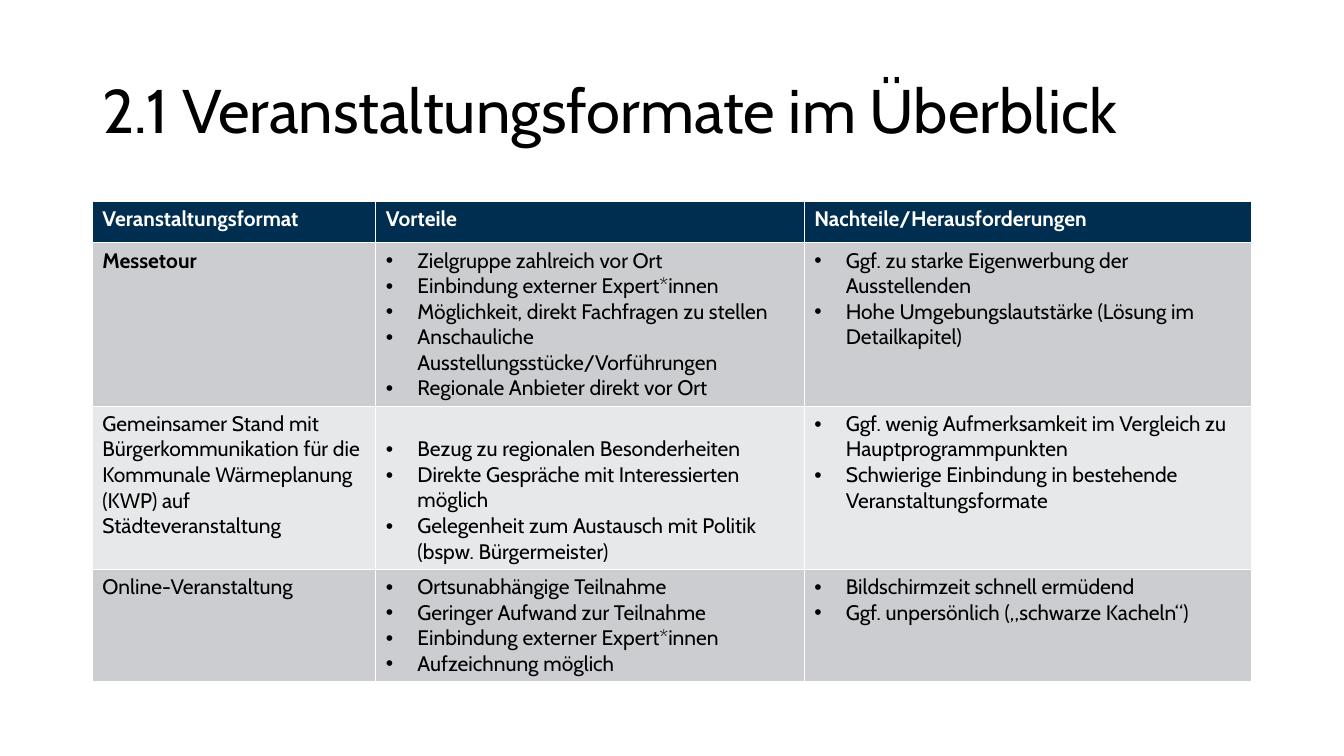
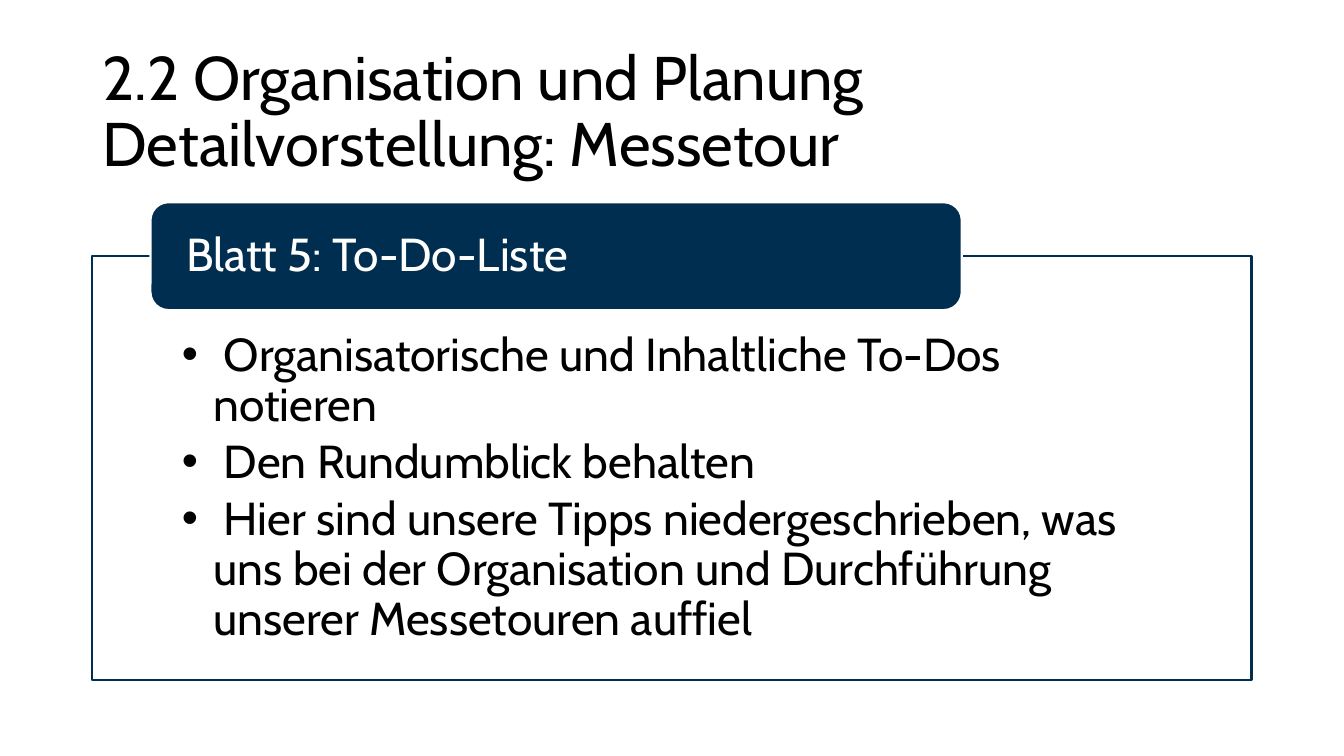
"""Build two slides on event formats and the planning of a trade fair tour."""
import pptx
import pptx.dml.color
import pptx.enum.shapes
import pptx.enum.text
import pptx.util
from lxml import etree

Pt = pptx.util.Pt
ANCHOR = pptx.enum.text.MSO_ANCHOR
LEFT = pptx.enum.text.PP_ALIGN.LEFT
NAVY, WHITE, BLACK = "002E50", "FFFFFF", "000000"
BANDS = ["CCCDD0", "E7E8E9"]
MARGIN, CONTENT_WIDTH = 66, 828
INDENT = 22.5
LINE_HEIGHT = 18.2


def rgb(value):
    return pptx.dml.color.RGBColor.from_string(value)


def style(paragraph, size, color=BLACK, bold=False, bullet=False):
    if bullet:
        properties = paragraph._p.get_or_add_pPr()
        properties.set("marL", str(Pt(INDENT)))
        properties.set("indent", str(-Pt(INDENT)))
        for tag, key, value in [("buFont", "typeface", "Arial"), ("buChar", "char", "•")]:
            etree.SubElement(properties, pptx.oxml.ns.qn("a:" + tag)).set(key, value)
    paragraph.alignment = LEFT
    paragraph.font.name = "Cabin"
    paragraph.font.size = Pt(size)
    paragraph.font.bold = bold
    paragraph.font.color.rgb = rgb(color)


deck = pptx.Presentation()
deck.slide_width, deck.slide_height = Pt(960), Pt(540)

slides = []
for layout, heading in [
    (5, "2.1 Veranstaltungsformate im Überblick"),
    (1, "2.2 Organisation und Planung\vDetailvorstellung: Messetour"),
]:
    slide = deck.slides.add_slide(deck.slide_layouts[layout])
    title = slide.shapes.title
    title.left, title.top, title.width, title.height = Pt(MARGIN), Pt(29), Pt(CONTENT_WIDTH), Pt(104.5)
    title.text_frame.text = heading
    title.text_frame.auto_size = pptx.enum.text.MSO_AUTO_SIZE.NONE
    title.text_frame.vertical_anchor = ANCHOR.MIDDLE
    title.text_frame.paragraphs[0].line_spacing = 0.9
    style(title.text_frame.paragraphs[0], 44)
    slides.append(slide)
overview, planning = slides

formats = [
    [["Veranstaltungsformat"], ["Vorteile"], ["Nachteile/Herausforderungen"]],
    [
        ["Messetour"],
        [
            "Zielgruppe zahlreich vor Ort",
            "Einbindung externer Expert*innen",
            "Möglichkeit, direkt Fachfragen zu stellen",
            "Anschauliche Ausstellungsstücke/Vorführungen",
            "Regionale Anbieter direkt vor Ort",
        ],
        [
            "Ggf. zu starke Eigenwerbung der Ausstellenden",
            "Hohe Umgebungslautstärke (Lösung im Detailkapitel)",
        ],
    ],
    [
        [
            "Gemeinsamer Stand mit Bürgerkommunikation für die "
            "Kommunale Wärmeplanung (KWP) auf Städteveranstaltung"
        ],
        [
            "Bezug zu regionalen Besonderheiten",
            "Direkte Gespräche mit Interessierten möglich",
            "Gelegenheit zum Austausch mit Politik (bspw. Bürgermeister)",
        ],
        [
            "Ggf. wenig Aufmerksamkeit im Vergleich zu Hauptprogrammpunkten",
            "Schwierige Einbindung in bestehende Veranstaltungsformate",
        ],
    ],
    [
        ["Online-Veranstaltung"],
        [
            "Ortsunabhängige Teilnahme",
            "Geringer Aufwand zur Teilnahme",
            "Einbindung externer Expert*innen",
            "Aufzeichnung möglich",
        ],
        [
            "Bildschirmzeit schnell ermüdend",
            "Ggf. unpersönlich („schwarze Kacheln“)",
        ],
    ],
]
column_widths = [202.5, 306, 319.5]
row_heights = [29.5, 116.5, 116.5, 79.5]
comparison = overview.shapes.add_table(
    len(row_heights), len(column_widths), Pt(MARGIN), Pt(144), Pt(CONTENT_WIDTH), Pt(sum(row_heights))
).table
for column, width in zip(comparison.columns, column_widths):
    column.width = Pt(width)
for r, (height, contents) in enumerate(zip(row_heights, formats)):
    comparison.rows[r].height = Pt(height)
    for c, lines in enumerate(contents):
        cell = comparison.cell(r, c)
        cell.fill.solid()
        cell.fill.fore_color.rgb = rgb(BANDS[(r - 1) % 2] if r else NAVY)
        cell.text_frame.text = "\n".join(lines)
        for paragraph in cell.text_frame.paragraphs:
            style(
                paragraph,
                15,
                color=BLACK if r else WHITE,
                bold=r == 0 or lines == ["Messetour"],
                bullet=r > 0 and c > 0,
            )
comparison.cell(2, 1).margin_top = Pt(3.6 + LINE_HEIGHT)

tips = planning.placeholders[1]
tips.left, tips.top, tips.width, tips.height = Pt(MARGIN), Pt(183), Pt(CONTENT_WIDTH), Pt(303)
tips.fill.solid()
tips.fill.fore_color.rgb = rgb(WHITE)
tips.line.color.rgb = rgb(NAVY)
tips.line.width = Pt(1.5)
frame = tips.text_frame
frame.auto_size = pptx.enum.text.MSO_AUTO_SIZE.NONE
frame.vertical_anchor = ANCHOR.TOP
frame.margin_left = frame.margin_right = Pt(64)
frame.margin_top, frame.margin_bottom = Pt(54), Pt(19)
frame.text = "\n".join([
    " Organisatorische und Inhaltliche To-Dos notieren",
    " Den Rundumblick behalten",
    " Hier sind unsere Tipps niedergeschrieben, was uns bei der Organisation "
    "und Durchführung unserer Messetouren auffiel",
])
for paragraph in frame.paragraphs:
    style(paragraph, 33, bullet=True)
    paragraph.line_spacing = 0.9
    paragraph.space_before = Pt(0)
    paragraph.space_after = Pt(5)

sheet_label = planning.shapes.add_shape(
    pptx.enum.shapes.MSO_SHAPE.ROUNDED_RECTANGLE, Pt(107.5), Pt(144.5), Pt(579.5), Pt(77)
)
sheet_label.shadow.inherit = False
sheet_label.fill.solid()
sheet_label.fill.fore_color.rgb = rgb(NAVY)
sheet_label.line.color.rgb = rgb(WHITE)
sheet_label.line.width = Pt(1.5)
sheet_label.text_frame.text = "Blatt 5: To-Do-Liste"
sheet_label.text_frame.vertical_anchor = ANCHOR.MIDDLE
sheet_label.text_frame.margin_left = Pt(22)
sheet_label.text_frame.paragraphs[0].line_spacing = 0.9
style(sheet_label.text_frame.paragraphs[0], 33, color=WHITE)

deck.save("out.pptx")
